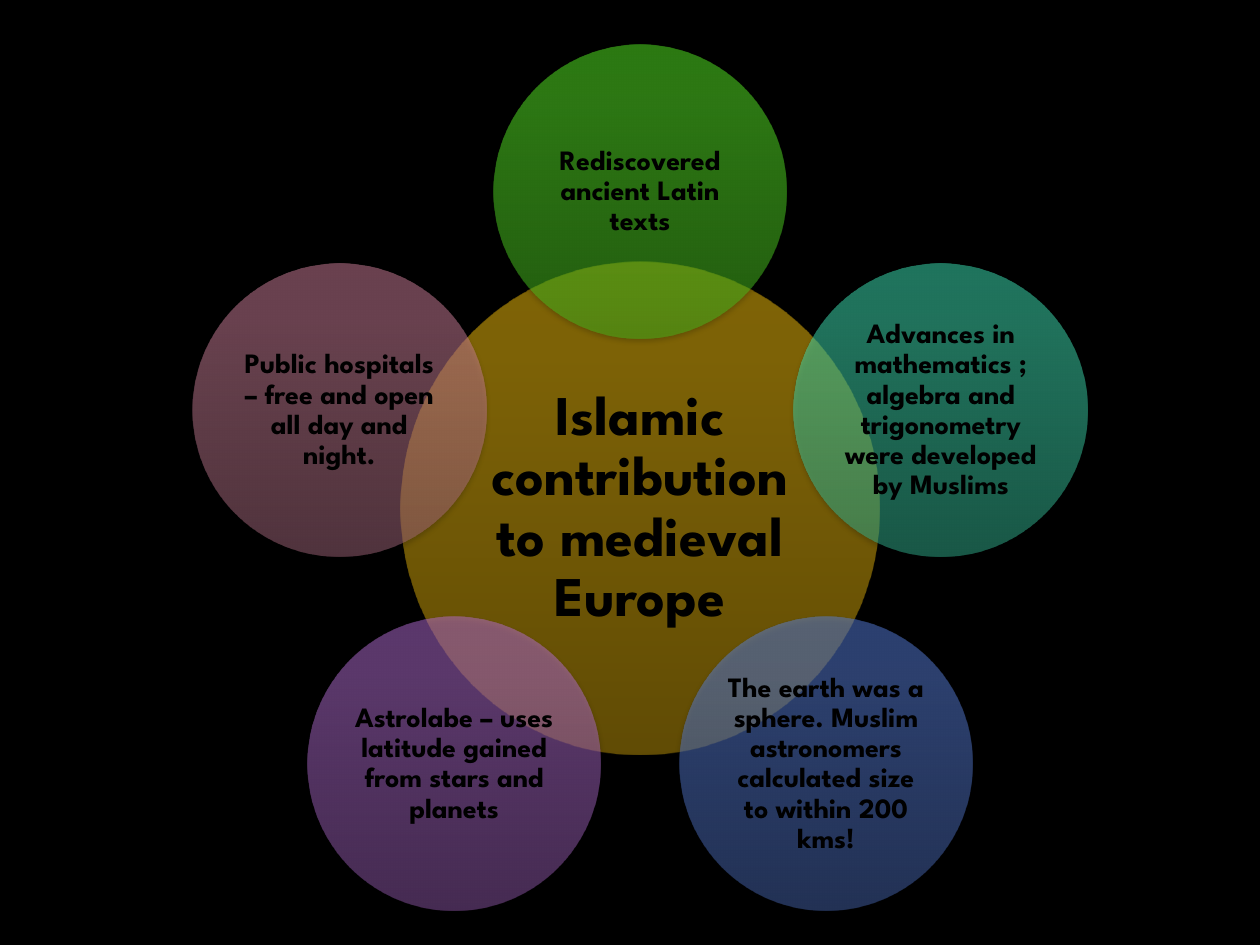
"""Build a radial Venn slide on the Islamic contribution to medieval Europe."""
import math

import lxml.etree
import pptx
import pptx.dml.color
import pptx.enum.shapes
import pptx.enum.text
import pptx.oxml.ns
import pptx.util

Inches = pptx.util.Inches
qn = pptx.oxml.ns.qn

COLORS = {
    "black": "000000",
    "gold": ("C29809", "FBC50C", "FFC80A"),
    "green": ("45B91E", "59F027", "58F524"),
    "teal": ("32B18F", "41E6B9", "3EEABC"),
    "blue": ("4563AB", "5980DE", "5780E2"),
    "purple": ("8D56A6", "B770D7", "B86EDA"),
    "rose": ("A2667A", "D3849F", "D5849F"),
}
STOP_POSITIONS = (0, 80, 100)
BLACK = pptx.dml.color.RGBColor.from_string(COLORS["black"])
CENTER_X, CENTER_Y, ORBIT = 5.08, 4.03, 2.51
CONTRIBUTIONS = [
    ("Rediscovered ancient Latin texts", "green"),
    ("Advances in mathematics ; algebra and trigonometry were developed by Muslims", "teal"),
    ("The earth was a sphere. Muslim astronomers calculated size to within 200 kms!", "blue"),
    ("Astrolabe – uses latitude gained from stars and planets", "purple"),
    ("Public hospitals – free and open all day and night.", "rose"),
]


def add_color(parent, color, opacity):
    element = lxml.etree.SubElement(parent, qn("a:srgbClr"), val=color)
    lxml.etree.SubElement(element, qn("a:alpha"), val=str(opacity * 1000))


def add_circle(slide, center, size, text_size, text, color, font_size, margin):
    x, y = center
    width, height = size
    circle = slide.shapes.add_shape(
        pptx.enum.shapes.MSO_SHAPE.OVAL,
        Inches(x - width / 2), Inches(y - height / 2), Inches(width), Inches(height),
    )
    circle.line.fill.background()
    circle.fill.gradient()
    circle.fill.gradient_angle = 90
    properties = circle.element.spPr
    stops = properties.find(".//" + qn("a:gsLst"))
    stops.clear()
    for position, stop_color in zip(STOP_POSITIONS, COLORS[color]):
        stop = lxml.etree.SubElement(stops, qn("a:gs"), pos=str(position * 1000))
        add_color(stop, stop_color, 50)

    circle.shadow.inherit = False
    shadow = lxml.etree.SubElement(
        properties.find(qn("a:effectLst")), qn("a:outerShdw"),
        blurRad=str(pptx.util.Pt(3.1)), dist=str(pptx.util.Pt(1.8)),
        dir="5400000", rotWithShape="0",
    )
    add_color(shadow, COLORS["black"], 35)

    text_width, text_height = text_size
    label = slide.shapes.add_textbox(
        Inches(x - text_width / 2), Inches(y - text_height / 2),
        Inches(text_width), Inches(text_height),
    )
    frame = label.text_frame
    frame.word_wrap = True
    frame.vertical_anchor = pptx.enum.text.MSO_ANCHOR.MIDDLE
    frame.margin_left = frame.margin_right = Inches(margin)
    frame.margin_top = frame.margin_bottom = Inches(margin)
    frame.text = text
    paragraph = frame.paragraphs[0]
    paragraph.alignment = pptx.enum.text.PP_ALIGN.CENTER
    paragraph.line_spacing = 0.9
    font = paragraph.runs[0].font
    font.name = "League Spartan"
    font.size = pptx.util.Pt(font_size)
    font.bold = True
    font.color.rgb = BLACK


presentation = pptx.Presentation()
presentation.slide_width = Inches(10)
presentation.slide_height = Inches(7.5)
slide = presentation.slides.add_slide(presentation.slide_layouts[6])
slide.background.fill.solid()
slide.background.fill.fore_color.rgb = BLACK

add_circle(
    slide, (CENTER_X, CENTER_Y), (3.8, 3.91), (2.68, 2.77),
    "Islamic contribution to medieval Europe", "gold", 32, 0.04,
)
for index, (text, color) in enumerate(CONTRIBUTIONS):
    angle = 2 * math.pi * index / len(CONTRIBUTIONS)
    center = (CENTER_X + ORBIT * math.sin(angle), CENTER_Y - ORBIT * math.cos(angle))
    add_circle(slide, center, (2.33, 2.33), (1.65, 1.65), text, color, 16, 0.02)

presentation.save("out.pptx")
